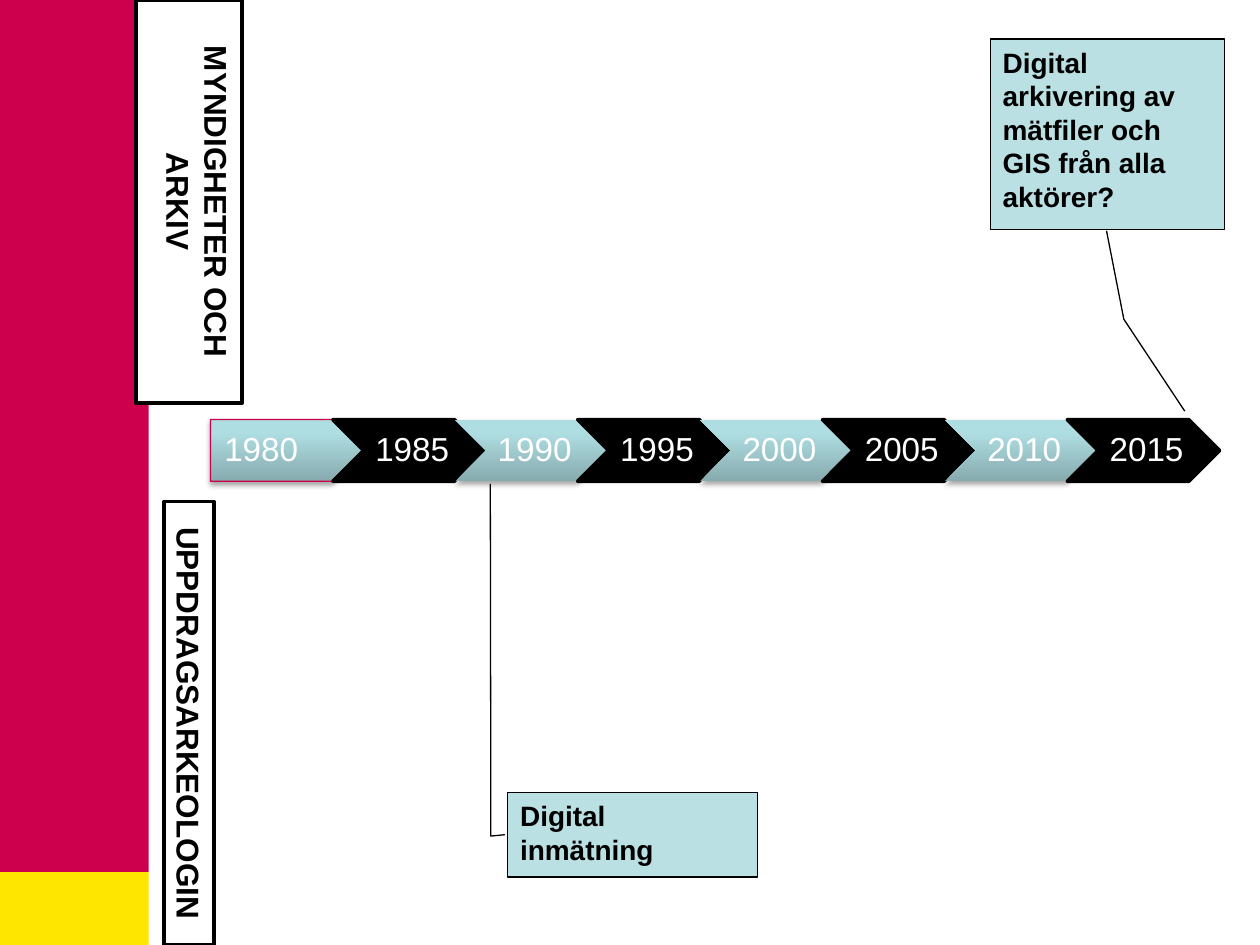
from dataclasses import dataclass

from lxml import etree
from pptx import Presentation
from pptx.dml.color import RGBColor
from pptx.enum import shapes, text
from pptx.oxml import parse_xml
from pptx.oxml.ns import nsdecls
from pptx.util import Inches, Pt

KIND = shapes.MSO_SHAPE
ALIGN = text.PP_ALIGN
ANCHOR = text.MSO_ANCHOR

WIDE, HIGH = 10, 7.5
RED = RGBColor(0xCC, 0x00, 0x4C)
GOLD = RGBColor(0xFF, 0xE6, 0x00)
BLACK = RGBColor(0x00, 0x00, 0x00)
WHITE = RGBColor(0xFF, 0xFF, 0xFF)
PALE = RGBColor(0xBB, 0xE0, 0xE3)
SHADES = ((0, RGBColor(0x87, 0xAB, 0xAE)),
          (80, RGBColor(0xAF, 0xDE, 0xE2)),
          (100, RGBColor(0xAF, 0xE0, 0xE4)))

# Timeline grid: eight steps of five years
FIRST, COUNT, SPAN = 1980, 8, 5
LEFT, TOP, STEP = 1.67, 3.33, 6.8 / 7
ARROW = (1.21, 0.49)


@dataclass
class Box:
    left: float
    top: float
    width: float
    height: float
    turn: float = 0


@dataclass
class Label:
    words: str
    box: Box


@dataclass
class Note:
    words: str
    box: Box
    bends: tuple


LABELS = (
    Label("UPPDRAGSARKEOLOGIN", Box(-0.26, 5.54, 3.52, 0.4, 90)),
    Label("MYNDIGHETER OCH ARKIV", Box(-0.1, 1.18, 3.2, 0.84, 90)),
)
NOTES = (
    Note("Digital arkivering av mätfiler och GIS från alla aktörer?",
         Box(7.86, 0.31, 1.86, 1.51),
         (1.008, 0.496, 1.473, 0.57, 1.956, 0.83)),
    Note("Digital inmätning", Box(4.03, 6.29, 1.98, 0.67),
         (0.5, -0.012, 0.516, -0.068, -3.656, -0.07)),
)


def draw(slide, kind, box: Box, fill=None, line=None, weight: float = 0.75):
    """Add a preset shape without shadow; no colour means no paint."""
    shape = slide.shapes.add_shape(
        kind, Inches(box.left), Inches(box.top),
        Inches(box.width), Inches(box.height))
    shape.rotation = box.turn
    shape.shadow.inherit = False
    if fill is not None:
        shape.fill.solid()
        shape.fill.fore_color.rgb = fill
    if line is None:
        shape.line.fill.background()
    else:
        shape.line.color.rgb = line
        shape.line.width = Pt(weight)
    return shape


def write(shape, words: str, *, size: float, color=BLACK, bold: bool = False,
          align=ALIGN.LEFT, anchor=ANCHOR.TOP, space: float = 1,
          inset: tuple = (0.1, 0.05, 0.1, 0.05)) -> None:
    """Fill a shape with one formatted paragraph."""
    frame = shape.text_frame
    frame.word_wrap = True
    frame.vertical_anchor = anchor
    (frame.margin_left, frame.margin_top,
     frame.margin_right, frame.margin_bottom) = map(Inches, inset)
    para = frame.paragraphs[0]
    para.alignment = align
    para.line_spacing = space
    run = para.add_run()
    run.text = words
    run.font.name = "Arial"
    run.font.size = Pt(size)
    run.font.bold = bold
    run.font.color.rgb = color


def shade(shape) -> None:
    """Give a shape the three-stop gradient and a soft shadow below."""
    shape.fill.gradient()
    shape.fill.gradient_angle = 90
    props = shape.element.spPr
    stops = props.find(".//{*}gsLst")
    for stop in list(stops):
        stops.remove(stop)
    for share, color in SHADES:
        stops.append(parse_xml(
            f'<a:gs {nsdecls("a")} pos="{share * 1000}">'
            f'<a:srgbClr val="{color}"/></a:gs>'))
    effect = props.find("{*}effectLst")
    effect.append(etree.fromstring(
        f'<a:outerShdw {nsdecls("a")} blurRad="{Pt(3.1)}" dist="{Pt(1.8)}" '
        'dir="5400000" rotWithShape="0"><a:srgbClr val="000000">'
        '<a:alpha val="35000"/></a:srgbClr></a:outerShdw>'))


def arrow(slide, index: int) -> None:
    """Draw one step of the timeline."""
    start, dark = index == 0, index % 2 == 1
    kind = KIND.PENTAGON if start else KIND.CHEVRON
    box = Box(LEFT + index * STEP, TOP, *ARROW)
    if dark:
        shape = draw(slide, kind, box, BLACK, BLACK, 2)
    else:
        shape = draw(slide, kind, box, line=RED if start else None)
        shade(shape)
    write(shape, str(FIRST + index * SPAN), size=19, color=WHITE, space=0.9,
          align=ALIGN.LEFT if start else ALIGN.CENTER, anchor=ANCHOR.MIDDLE,
          inset=(0.11 if start else 0.08, 0.06, 0.03, 0.06))


def main() -> None:
    deck = Presentation()
    deck.slide_width, deck.slide_height = Inches(WIDE), Inches(HIGH)
    slide = deck.slides.add_slide(deck.slide_layouts[6])

    # Side band
    band, split = 0.118 * WIDE, 6.92
    draw(slide, KIND.RECTANGLE, Box(0, split, band, HIGH - split), GOLD)
    draw(slide, KIND.RECTANGLE, Box(0, 0, band, split), RED)

    # Timeline
    for index in range(COUNT):
        arrow(slide, index)

    # Upright labels
    for label in LABELS:
        shape = draw(slide, KIND.RECTANGLE, label.box, WHITE, BLACK, 2)
        write(shape, label.words, size=18, bold=True, align=ALIGN.CENTER)

    # Callouts
    for note in NOTES:
        shape = draw(slide, KIND.LINE_CALLOUT_2, note.box, PALE, BLACK)
        for spot, bend in enumerate(note.bends):
            shape.adjustments[spot] = bend
        write(shape, note.words, size=16, bold=True)

    deck.save("out.pptx")


if __name__ == "__main__":
    main()
